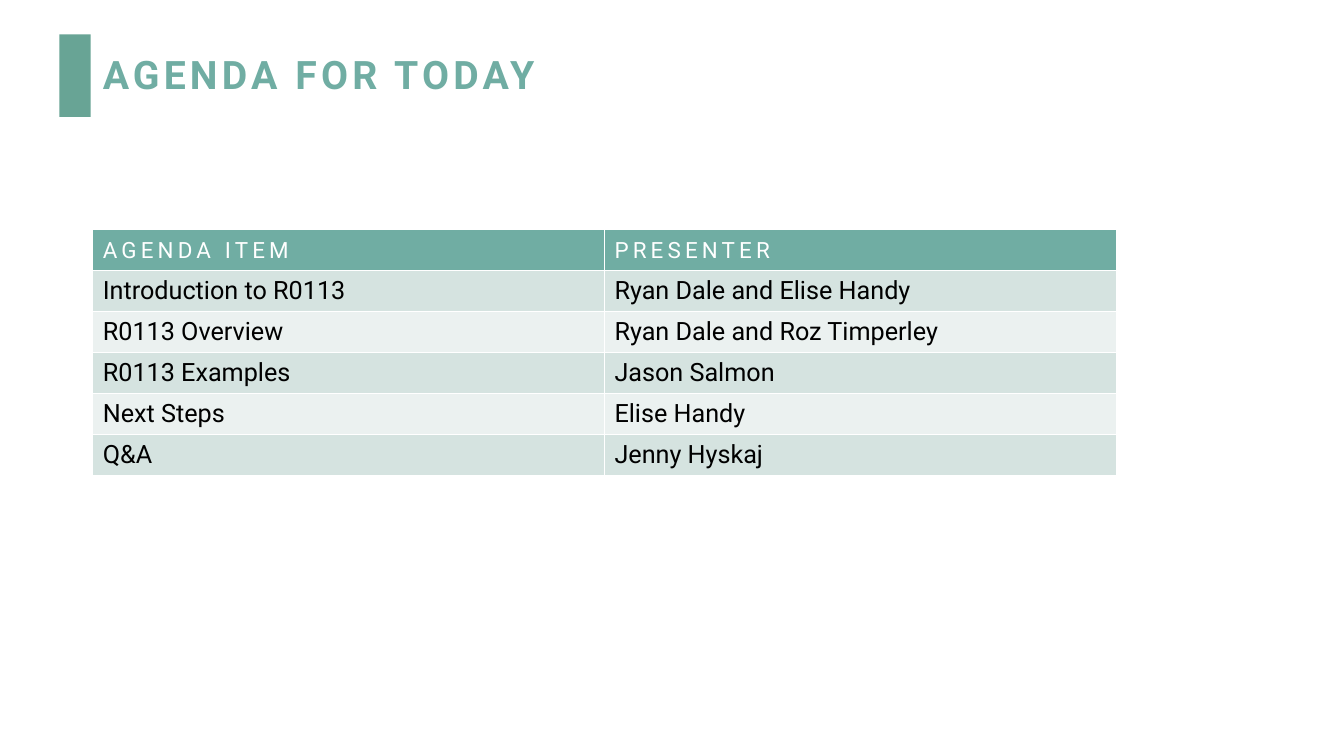
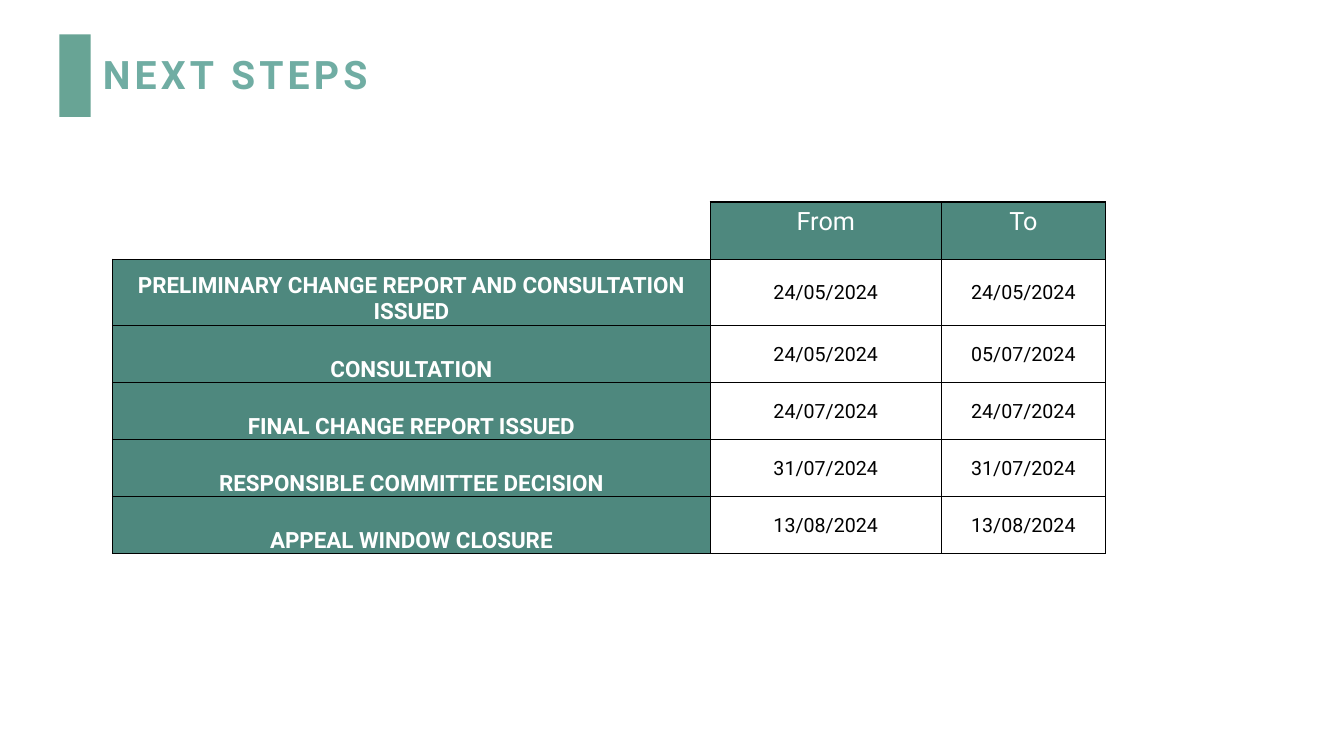
from pptx import Presentation
from pptx.dml.color import RGBColor
from pptx.enum.shapes import MSO_SHAPE as SHAPE
from pptx.enum.text import MSO_ANCHOR as ANCHOR, PP_ALIGN as ALIGN
from pptx.oxml import parse_xml
from pptx.oxml.ns import nsdecls
from pptx.util import Pt

# Shared look
FONT = "Roboto"
BLACK, WHITE = "000000", "FFFFFF"
BAND, TEAL, DARK_TEAL = "68A495", "70ADA3", "4E887E"
STRIPES = ("D5E3E0", "EBF1F0")
LEFT, WIDTH = 66.24, 731

# Cell styles
AGENDA_HEAD = dict(size=16, color=WHITE, fill=TEAL, spacing=3)
AGENDA_ROWS = [dict(size=18, color=BLACK, fill=c) for c in STRIPES]
CORNER = dict(fill=WHITE, sides="RB")
DATE_HEAD = dict(size=18, color=WHITE, fill=DARK_TEAL,
                 align=ALIGN.CENTER, anchor=ANCHOR.TOP)
TIGHT = dict(align=ALIGN.CENTER, margins=(0.7, 0.7, 0.7, 0))
STEP = dict(TIGHT, size=16, color=WHITE, fill=DARK_TEAL, bold=True,
            anchor=ANCHOR.BOTTOM)
DATE = dict(TIGHT, size=14, color=BLACK, fill=WHITE)

# Content
AGENDA = [
    ("AGENDA ITEM", "PRESENTER"),
    ("Introduction to R0113", "Ryan Dale and Elise Handy"),
    ("R0113 Overview", "Ryan Dale and Roz Timperley"),
    ("R0113 Examples", "Jason Salmon"),
    ("Next Steps", "Elise Handy"),
    ("Q&A", "Jenny Hyskaj"),
]
STEPS = [
    ("", "From", "To"),
    ("PRELIMINARY CHANGE REPORT AND CONSULTATION ISSUED",
     "24/05/2024", "24/05/2024"),
    ("CONSULTATION", "24/05/2024", "05/07/2024"),
    ("FINAL CHANGE REPORT ISSUED", "24/07/2024", "24/07/2024"),
    ("RESPONSIBLE COMMITTEE DECISION", "31/07/2024", "31/07/2024"),
    ("APPEAL WINDOW CLOSURE", "13/08/2024", "13/08/2024"),
]


def rgb(color):
    return RGBColor.from_string(color)


def paint(target, color):
    target.fill.solid()
    target.fill.fore_color.rgb = rgb(color)


def write(p, text, size, color, bold=False, spacing=0):
    r = p.add_run()
    r.text = text
    for name, value in dict(name=FONT, size=Pt(size), bold=bold).items():
        setattr(r.font, name, value)
    r.font.color.rgb = rgb(color)
    r.font._element.set("spc", str(spacing * 100))


def add_titled_slide(prs, title):
    s = prs.slides.add_slide(prs.slide_layouts[5])
    # Band beside the title
    band = s.shapes.add_shape(SHAPE.RECTANGLE, Pt(42.5), Pt(24.5), Pt(22.3), Pt(59))
    band.shadow.inherit = False
    paint(band, BAND)
    band.line.fill.background()
    # Title
    sp = s.shapes.title
    place = dict(left=LEFT, top=28.8, width=WIDTH, height=51.84)
    for name, value in place.items():
        setattr(sp, name, Pt(value))
    tf = sp.text_frame
    tf.vertical_anchor = ANCHOR.MIDDLE
    p = tf.paragraphs[0]
    p.alignment = ALIGN.LEFT
    p.line_spacing = 0.9
    write(p, title, 28, TEAL, bold=True, spacing=3)
    return s


def add_borders(cell, color, sides):
    tcPr = cell._tc.get_or_add_tcPr()
    for side in sides:
        tcPr.append(parse_xml(
            f'<a:ln{side} {nsdecls("a")} w="{Pt(1)}"><a:solidFill>'
            f'<a:srgbClr val="{color}"/></a:solidFill></a:ln{side}>'))


def fill_cell(cell, text, border, fill, align=ALIGN.LEFT, anchor=ANCHOR.MIDDLE,
              margins=(7.2, 7.2, 3.6, 3.6), sides="LRTB", **font):
    add_borders(cell, border, sides)
    paint(cell, fill)
    cell.vertical_anchor = anchor
    for side, value in zip(("left", "right", "top", "bottom"), margins):
        setattr(cell, f"margin_{side}", Pt(value))
    p = cell.text_frame.paragraphs[0]
    p.alignment = align
    if text:
        write(p, text, **font)


def add_grid(s, rows, left, top, widths, heights, border, style_of):
    """Add a table; style_of(row, column) gives the look of each cell."""
    table = s.shapes.add_table(len(rows), len(widths), Pt(left), Pt(top),
                               Pt(sum(widths)), Pt(sum(heights))).table
    table.first_row = table.horz_banding = False
    for column, width in zip(table.columns, widths):
        column.width = Pt(width)
    for i, (row, height) in enumerate(zip(rows, heights)):
        table.rows[i].height = Pt(height)
        for j, text in enumerate(row):
            fill_cell(table.cell(i, j), text, border, **style_of(i, j))


def agenda_style(i, j):
    return AGENDA_ROWS[(i - 1) % 2] if i else AGENDA_HEAD


def steps_style(i, j):
    if i == 0:
        return DATE_HEAD if j else CORNER
    return DATE if j else STEP


def main():
    prs = Presentation()
    prs.slide_width, prs.slide_height = Pt(960), Pt(540)

    s = add_titled_slide(prs, "AGENDA FOR TODAY")
    add_grid(s, AGENDA, LEFT, 164.2, [WIDTH / 2] * 2, [29.3] * 6, WHITE,
             agenda_style)

    s = add_titled_slide(prs, "NEXT STEPS")
    add_grid(s, STEPS, 80.4, 144.3, [427, 165, 117.4],
             [40.8, 47.3] + [40.8] * 4, BLACK, steps_style)

    prs.save("out.pptx")


if __name__ == "__main__":
    main()
